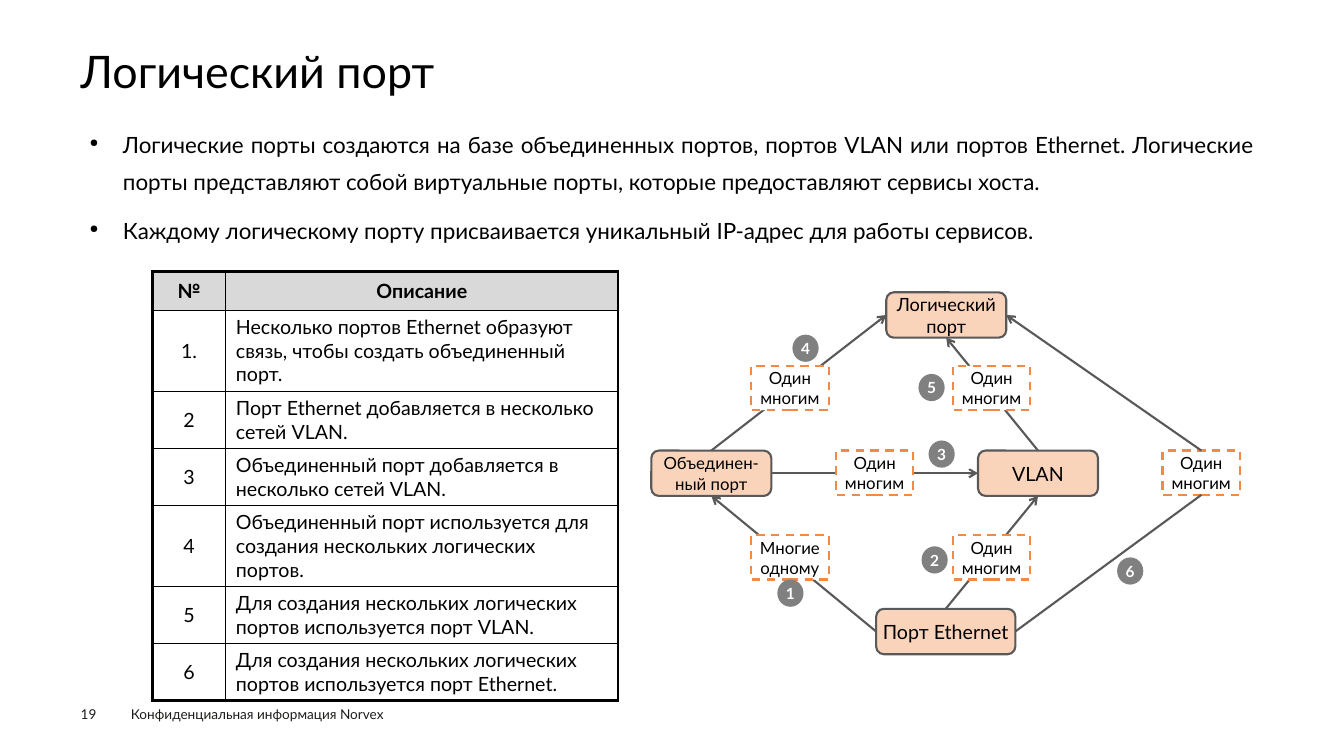
from dataclasses import dataclass

from lxml import etree
from pptx import Presentation
from pptx import util as u
from pptx.dml.color import RGBColor
from pptx.enum import dml, shapes, text
from pptx.oxml import ns


@dataclass(frozen=True)
class Theme:
    font: str = "Lato"
    ink: str = "000000"
    footer: str = "1D1D1B"
    paper: str = "FFFFFF"
    header: str = "D9D9D9"
    node: str = "FAD3BB"
    line: str = "595959"
    label: str = "F28944"
    badge: str = "808080"
    title_size: float = 32
    body_size: float = 16
    table_size: float = 14
    label_size: float = 12
    badge_size: float = 11
    footer_size: float = 9.7
    stroke: float = 1.5
    thin: float = 1
    thick: float = 2.25


T = Theme()
NODE_W, NODE_H = 1.19, 0.45
TOP, LEFT, BOTTOM, RIGHT = range(4)  # connection sites
PAD = 0.02

BULLETS = [
    "Логические порты создаются на базе объединенных портов, портов VLAN или портов Ethernet. "
    "Логические порты представляют собой виртуальные порты, которые предоставляют сервисы хоста.",
    "Каждому логическому порту присваивается уникальный IP-адрес для работы сервисов.",
]
ROWS = [
    ("№", "Описание"),
    ("1.", "Несколько портов Ethernet образуют связь, чтобы создать объединенный порт."),
    ("2", "Порт Ethernet добавляется в несколько сетей VLAN."),
    ("3", "Объединенный порт добавляется в несколько сетей VLAN."),
    ("4", "Объединенный порт используется для создания нескольких логических портов."),
    ("5", "Для создания нескольких логических портов используется порт VLAN."),
    ("6", "Для создания нескольких логических портов используется порт Ethernet."),
]
# name: text, left, top, width, size
NODES = {
    "ethernet": ("Порт Ethernet", 8.69, 6.04, 1.38, 14),
    "logical": ("Логический порт", 8.79, 2.9, NODE_W, 13),
    "bond": ("Объединен-ный порт", 6.46, 4.47, NODE_W, 12),
    "vlan": ("VLAN", 9.7, 4.47, NODE_W, 14),
}
# from node and site, to node and site, arrowhead
LINKS = [
    ("bond", RIGHT, "vlan", LEFT, True),
    ("bond", TOP, "logical", LEFT, True),
    ("direct", TOP, "logical", RIGHT, True),
    ("vlan", TOP, "logical", BOTTOM, True),
    ("ethernet", LEFT, "bond", BOTTOM, True),
    ("ethernet", TOP, "vlan", BOTTOM, True),
    ("ethernet", RIGHT, "direct", BOTTOM, False),
]
ONE_MANY = "Один многим"
LABELS = [("Многие одному", 7.45, 5.31), (ONE_MANY, 9.45, 3.63), (ONE_MANY, 9.45, 5.31),
          (ONE_MANY, 8.29, 4.47), (ONE_MANY, 7.45, 3.63)]
BADGES = [(7.71, 5.75), (9.14, 5.42), (9.21, 4.37), (7.86, 3.32), (9.11, 3.71), (11.08, 5.53)]


def rgb(color):
    return RGBColor.from_string(color)


def write(p, words, size, color=T.ink, bold=False, align=None, spacing=None, before=None):
    """Put one formatted run into a paragraph."""
    p.alignment, p.line_spacing = align, spacing
    if before is not None:
        p.space_before = u.Pt(before)
    r = p.add_run()
    r.text = words
    r.font.name, r.font.size, r.font.bold = T.font, u.Pt(size), bold
    r.font.color.rgb = rgb(color)


def set_margins(tf, x, y):
    tf.margin_left = tf.margin_right = u.Inches(x)
    tf.margin_top = tf.margin_bottom = u.Inches(y)


def add_text(s, box, margins=(0, 0)):
    tf = s.shapes.add_textbox(*map(u.Inches, box)).text_frame
    tf.word_wrap = True
    set_margins(tf, *margins)
    return tf


def add_bullet(p):
    pr = p._p.get_or_add_pPr()
    pr.set("marL", str(u.Inches(0.33)))
    pr.set("indent", str(-u.Inches(0.33)))
    etree.SubElement(pr, ns.qn("a:buSzPct")).set("val", "50000")
    etree.SubElement(pr, ns.qn("a:buChar")).set("char", "●")


def add_box(s, kind, box, words, size, fill, color=T.ink, line=None, dash=None, bold=False):
    sp = s.shapes.add_shape(kind, *map(u.Inches, box))
    sp.shadow.inherit = False
    sp.fill.solid()
    sp.fill.fore_color.rgb = rgb(fill)
    if line:
        sp.line.color.rgb = rgb(line)
        sp.line.width = u.Pt(T.stroke)
        sp.line.dash_style = dash
    else:
        sp.line.fill.background()
    tf = sp.text_frame
    tf.word_wrap = True
    tf.vertical_anchor = text.MSO_ANCHOR.MIDDLE
    set_margins(tf, PAD, PAD)
    write(tf.paragraphs[0], words, size, color, bold, text.PP_ALIGN.CENTER)
    return sp


def add_label(s, words, x, y):
    return add_box(s, shapes.MSO_SHAPE.RECTANGLE, (x, y, 0.77, 0.44), words, T.label_size,
                   T.paper, line=T.label, dash=dml.MSO_LINE.DASH)


def add_link(s, start, start_site, end, end_site, arrow):
    c = s.shapes.add_connector(shapes.MSO_CONNECTOR.STRAIGHT, 0, 0, 0, 0)
    c.begin_connect(start, start_site)
    c.end_connect(end, end_site)
    c.line.color.rgb = rgb(T.line)
    c.line.width = u.Pt(T.stroke)
    if arrow:
        etree.SubElement(c.line._get_or_add_ln(), ns.qn("a:tailEnd")).set("type", "arrow")
    etree.SubElement(c._element.spPr, ns.qn("a:effectLst"))


def set_borders(cell, widths):
    pr = cell._tc.get_or_add_tcPr()
    for i, (side, width) in enumerate(widths.items()):
        ln = etree.Element(ns.qn(f"a:ln{side}"), w=str(u.Pt(width)))
        fill = etree.SubElement(ln, ns.qn("a:solidFill"))
        etree.SubElement(fill, ns.qn("a:srgbClr")).set("val", T.ink)
        pr.insert(i, ln)


def add_table(s):
    n = len(ROWS)
    box = map(u.Inches, (1.51, 2.69, 4.62, 4.25))
    table = s.shapes.add_table(n, 2, *box).table
    table.first_row = table.horz_banding = False
    for column, width in zip(table.columns, (0.73, 3.89)):
        column.width = u.Inches(width)
    for i, row in enumerate(ROWS):
        head = i == 0
        table.rows[i].height = u.Inches(0.39 if head else 0.54)
        for j, words in enumerate(row):
            cell = table.cell(i, j)
            cell.vertical_anchor = text.MSO_ANCHOR.MIDDLE
            if head:
                cell.fill.solid()
                cell.fill.fore_color.rgb = rgb(T.header)
            else:
                cell.fill.background()
            outer = {"L": j == 0, "R": j == 1, "T": head, "B": i == n - 1}
            set_borders(cell, {k: T.thick if v else T.thin for k, v in outer.items()})
            align = text.PP_ALIGN.CENTER if head or j == 0 else text.PP_ALIGN.LEFT
            write(cell.text_frame.paragraphs[0], words, T.table_size, bold=head, align=align)


def add_diagram(s):
    # Nodes, with the label that the direct link passes through
    ends = {name: add_box(s, shapes.MSO_SHAPE.ROUNDED_RECTANGLE, (x, y, w, NODE_H), words,
                          size, T.node, line=T.line)
            for name, (words, x, y, w, size) in NODES.items()}
    ends["direct"] = add_label(s, ONE_MANY, 11.53, 4.47)
    # Links, then labels and numbers over them
    for start, start_site, end, end_site, arrow in LINKS:
        add_link(s, ends[start], start_site, ends[end], end_site, arrow)
    for label in LABELS:
        add_label(s, *label)
    for number, (x, y) in enumerate(BADGES, 1):
        add_box(s, shapes.MSO_SHAPE.OVAL, (x, y, 0.26, 0.27), str(number), T.badge_size,
                T.badge, T.paper, bold=True)


def main():
    prs = Presentation()
    prs.slide_width, prs.slide_height = u.Inches(13.33), u.Inches(7.5)
    s = prs.slides.add_slide(prs.slide_layouts[6])

    # Footer
    tf = add_text(s, (1.2, 6.95, 3.29, 0.26), (0.1, 0.05))
    write(tf.paragraphs[0], "Конфиденциальная информация Norvex", T.footer_size, T.footer)
    tf = add_text(s, (0.8, 7, 0.55, 0.16))
    write(tf.paragraphs[0], "19", T.footer_size, T.footer)

    # Title and bullets
    tf = add_text(s, (0.8, 0.49, 11.73, 0.54))
    write(tf.paragraphs[0], "Логический порт", T.title_size, spacing=0.9)
    tf = add_text(s, (0.8, 1.15, 11.73, 1.4), (0.09, 0.04))
    for i, words in enumerate(BULLETS):
        p = tf.add_paragraph() if i else tf.paragraphs[0]
        add_bullet(p)
        write(p, words, T.body_size, align=text.PP_ALIGN.JUSTIFY, spacing=1.4,
              before=7.9 if i else None)

    # Diagram and table
    add_diagram(s)
    add_table(s)
    prs.save("out.pptx")


if __name__ == "__main__":
    main()
